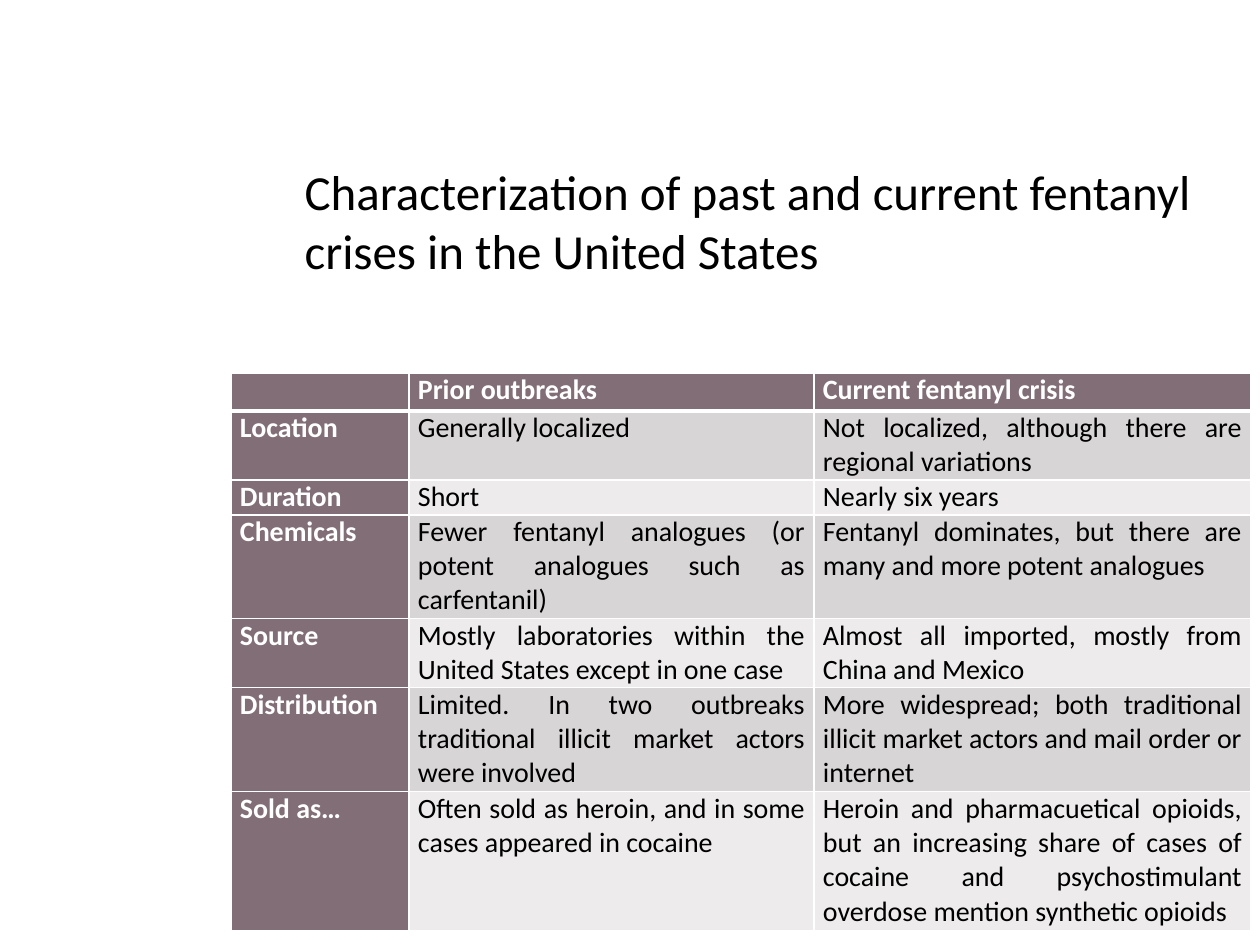
from lxml.etree import SubElement
from pptx import Presentation
from pptx.dml.color import RGBColor
from pptx.enum.text import MSO_ANCHOR, MSO_AUTO_SIZE, PP_ALIGN
from pptx.oxml.ns import qn
from pptx.util import Emu, Pt

TITLE = "Characterization of past and current fentanyl crises in the United States"
COMPARISON = [
    ("", "Prior outbreaks", "Current fentanyl crisis"),
    ("Location", "Generally localized",
     "Not localized, although there are regional variations"),
    ("Duration", "Short", "Nearly six years"),
    ("Chemicals", "Fewer fentanyl analogues (or potent analogues such as carfentanil)",
     "Fentanyl dominates, but there are many and more potent analogues"),
    ("Source", "Mostly laboratories within the United States except in one case",
     "Almost all imported, mostly from China and Mexico"),
    ("Distribution",
     "Limited. In two outbreaks traditional illicit market actors were involved",
     "More widespread; both traditional illicit market actors and mail order or internet"),
    ("Sold as…", "Often sold as heroin, and in some cases appeared in cocaine",
     "Heroin and pharmacuetical opioids, but an increasing share of cases of cocaine "
     "and psychostimulant overdose mention synthetic opioids"),
]
COLUMN_WIDTHS = (178, 405, 437)
ROW_HEIGHTS = (35, 69, 35, 104, 69, 104, 139)


def px(length):
    return Emu(round(length * 914400 / 126))


def color(value):
    return RGBColor.from_string(value)


def write(frame, text, size=16, ink="000000", bold=False, align=PP_ALIGN.LEFT, after=0):
    paragraph = frame.paragraphs[0]
    paragraph.alignment = align
    paragraph.space_after = Pt(after)
    run = paragraph.add_run()
    run.text = text
    run.font.name = "Calibri"
    run.font.size = Pt(size)
    run.font.bold = bold
    run.font.color.rgb = color(ink)


class ComparisonSlide:
    """Holds the table style and the slide being built."""

    white, accent = "FFFFFF", "826E77"
    bands = ("EDEBEC", "D8D5D6")

    def __init__(self, deck):
        self.slide = deck.slides.add_slide(deck.slide_layouts[5])

    def title(self, text, left, top, width, height):
        heading = self.slide.shapes.title
        heading.left, heading.top = px(left), px(top)
        heading.width, heading.height = px(width), px(height)
        frame = heading.text_frame
        frame.word_wrap = True
        frame.auto_size = MSO_AUTO_SIZE.SHAPE_TO_FIT_TEXT
        frame.vertical_anchor = MSO_ANCHOR.TOP
        write(frame, text, size=28)

    def border(self, cell, side, points):
        line = SubElement(cell._tc.get_or_add_tcPr(), qn(f"a:ln{side}"), w=str(Pt(points)))
        SubElement(SubElement(line, qn("a:solidFill")), qn("a:srgbClr"), val=self.white)

    def cell(self, cell, text, row, column):
        heading = row == 0 or column == 0
        cell.margin_left = cell.margin_right = px(9)
        cell.margin_top = cell.margin_bottom = 0
        thick_side = {0: "B", 1: "T"}.get(row)
        for side in "LRTB":
            self.border(cell, side, 3 if side == thick_side else 1)
        cell.fill.solid()
        cell.fill.fore_color.rgb = color(self.accent if heading else self.bands[row % 2])
        write(cell.text_frame, text, ink=self.white if heading else "000000",
              bold=heading, align=PP_ALIGN.JUSTIFY, after=6)

    def table(self, rows, left, top, widths, heights):
        grid = self.slide.shapes.add_table(
            len(heights), len(widths), px(left), px(top), px(sum(widths)), px(sum(heights))
        ).table
        for column, width in zip(grid.columns, widths):
            column.width = px(width)
        for row, height in zip(grid.rows, heights):
            row.height = px(height)
        for r, texts in enumerate(rows):
            for c, text in enumerate(texts):
                self.cell(grid.cell(r, c), text, r, c)


def main():
    deck = Presentation()
    deck.slide_width, deck.slide_height = px(1260), px(945)
    comparison = ComparisonSlide(deck)
    comparison.title(TITLE, 292, 155, 925, 131)
    comparison.table(COMPARISON, 231, 373, COLUMN_WIDTHS, ROW_HEIGHTS)
    deck.save("out.pptx")


if __name__ == "__main__":
    main()
